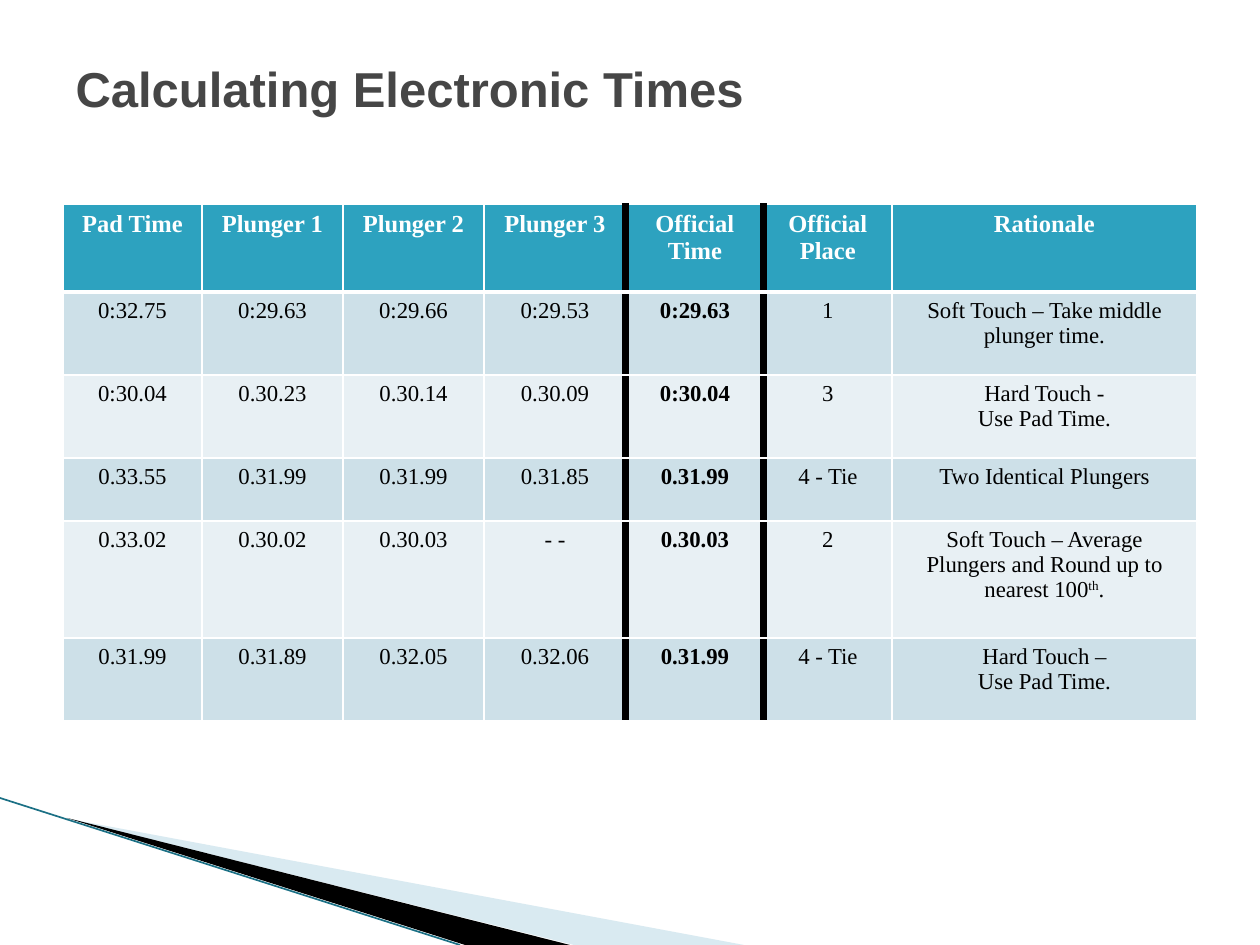
from dataclasses import dataclass

from lxml import etree
from pptx import Presentation
from pptx import util as u
from pptx.dml.color import RGBColor
from pptx.enum import shapes, text
from pptx.oxml.ns import qn

TITLE = "Calculating Electronic Times"
HEADERS = ["Pad Time", "Plunger 1", "Plunger 2", "Plunger 3",
           "Official Time", "Official Place", "Rationale"]
SWIMS = [
    ["0:32.75", "0:29.63", "0:29.66", "0:29.53", "0:29.63", "1",
     "Soft Touch – Take middle plunger time."],
    ["0:30.04", "0.30.23", "0.30.14", "0.30.09", "0:30.04", "3",
     "Hard Touch -\vUse Pad Time."],
    ["0.33.55", "0.31.99", "0.31.99", "0.31.85", "0.31.99", "4 - Tie",
     "Two Identical Plungers"],
    ["0.33.02", "0.30.02", "0.30.03", "- -", "0.30.03", "2",
     "Soft Touch – Average Plungers and Round up to nearest 100^th^."],
    ["0.31.99", "0.31.89", "0.32.05", "0.32.06", "0.31.99", "4 - Tie",
     "Hard Touch –\nUse Pad Time."],
]
COLUMN_WIDTHS = [139, 141, 141, 142, 138, 128, 305]
ROW_HEIGHTS = [88, 83, 83, 63, 117, 83]
TABLE_LEFT, TABLE_TOP = 63, 204
OFFICIAL_TIME = HEADERS.index("Official Time")
PALE_WEDGE = [(69, 819), (744, 945), (574, 945)]
DARK_WEDGE = [(67, 818), (570, 945), (465, 945)]
EDGE_LINE = (0, 798, 460, 945)


@dataclass(frozen=True)
class Theme:
    title_font: str = "Arial"
    table_font: str = "Times New Roman"
    title_size: int = 28
    header_size: int = 14
    body_size: int = 13
    title: str = "464646"
    header: str = "2DA2BF"
    bands: tuple = ("CDE0E8", "E8F0F4")
    white: str = "FFFFFF"
    black: str = "000000"
    wedge: str = "A0CBDC"
    edge: str = "1B7085"
    thin: float = 1
    medium: float = 3
    thick: float = 4.5


THEME = Theme()
SCALE = 914400 / 126


def px(length):
    return u.Emu(round(length * SCALE))


def rgb(color):
    return RGBColor.from_string(color)


def style(font, name, size, color, bold):
    font.name, font.size, font.bold = name, u.Pt(size), bold
    font.color.rgb = rgb(color)


def add_wedge(page, points, color, opacity=100):
    builder = page.shapes.build_freeform(*points[0], scale=SCALE)
    builder.add_line_segments(points[1:], close=True)
    wedge = builder.convert_to_shape()
    wedge.shadow.inherit = False
    wedge.fill.solid()
    wedge.fill.fore_color.rgb = rgb(color)
    wedge.line.fill.background()
    if opacity < 100:
        tint = wedge.fill._xPr.find(".//" + qn("a:srgbClr"))
        etree.SubElement(tint, qn("a:alpha"), val=str(opacity * 1000))


def add_edge(page):
    ends = [px(value) for value in EDGE_LINE]
    edge = page.shapes.add_connector(shapes.MSO_CONNECTOR.STRAIGHT, *ends)
    edge.line.color.rgb = rgb(THEME.edge)
    edge.line.width = u.Pt(0.95)
    etree.SubElement(edge._element.spPr, qn("a:effectLst"))


def set_title(page):
    box = page.shapes.title
    box.left, box.top, box.width, box.height = map(px, (63, 38, 1134, 157))
    frame = box.text_frame
    frame.vertical_anchor = text.MSO_ANCHOR.MIDDLE
    frame.margin_bottom = px(63)
    para = frame.paragraphs[0]
    para.alignment = text.PP_ALIGN.LEFT
    span = para.add_run()
    span.text = TITLE
    style(span.font, THEME.title_font, THEME.title_size, THEME.title, True)


def set_borders(cell, row, column):
    sides = {
        "lnL": column in (OFFICIAL_TIME, OFFICIAL_TIME + 1),
        "lnR": column in (OFFICIAL_TIME - 1, OFFICIAL_TIME),
        "lnT": False,
        "lnB": False,
    }
    for side, divider in sides.items():
        header_rule = (side, row) in (("lnB", 0), ("lnT", 1))
        width = THEME.thick if divider else THEME.medium if header_rule else THEME.thin
        line = etree.SubElement(cell._tc.get_or_add_tcPr(), qn("a:" + side),
                                w=str(u.Pt(width)))
        fill = etree.SubElement(line, qn("a:solidFill"))
        etree.SubElement(fill, qn("a:srgbClr"),
                         val=THEME.black if divider else THEME.white)


def write_cell(cell, content, size, color, bold):
    frame = cell.text_frame
    for number, paragraph in enumerate(content.split("\n")):
        para = frame.add_paragraph() if number else frame.paragraphs[0]
        para.alignment = text.PP_ALIGN.CENTER
        for index, line in enumerate(paragraph.split("\v")):
            if index:
                para.add_line_break()
            for part, words in enumerate(line.split("^")):
                span = para.add_run()
                span.text = words
                style(span.font, THEME.table_font, size, color, bold)
                if part % 2:
                    span._r.get_or_add_rPr().set("baseline", "30000")


def add_times_table(page):
    rows = [HEADERS] + SWIMS
    table = page.shapes.add_table(
        len(rows), len(HEADERS), px(TABLE_LEFT), px(TABLE_TOP),
        px(sum(COLUMN_WIDTHS)), px(sum(ROW_HEIGHTS))).table
    for column, width in zip(table.columns, COLUMN_WIDTHS):
        column.width = px(width)
    for row, height in zip(table.rows, ROW_HEIGHTS):
        row.height = px(height)
    for r, contents in enumerate(rows):
        for c, content in enumerate(contents):
            cell = table.cell(r, c)
            cell.margin_left = cell.margin_right = px(14)
            set_borders(cell, r, c)
            cell.fill.solid()
            cell.fill.fore_color.rgb = rgb(THEME.bands[(r - 1) % 2] if r else THEME.header)
            if r:
                write_cell(cell, content, THEME.body_size, THEME.black, c == OFFICIAL_TIME)
            else:
                write_cell(cell, content, THEME.header_size, THEME.white, True)


def main():
    deck = Presentation()
    deck.slide_width, deck.slide_height = px(1260), px(945)
    page = deck.slides.add_slide(deck.slide_layouts[5])
    add_wedge(page, PALE_WEDGE, THEME.wedge, opacity=40)
    add_wedge(page, DARK_WEDGE, THEME.black)
    add_edge(page)
    add_times_table(page)
    set_title(page)
    deck.save("out.pptx")


if __name__ == "__main__":
    main()
